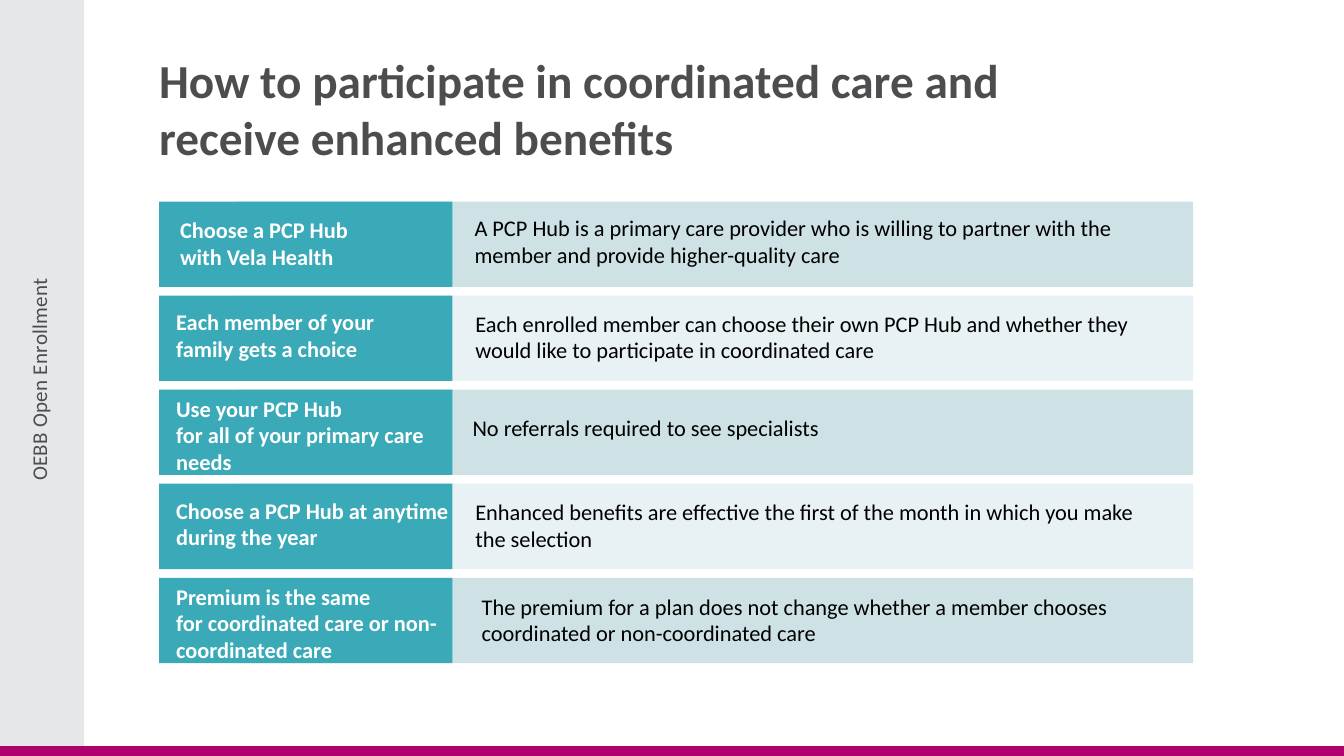
from copy import deepcopy
from dataclasses import dataclass

from pptx import Presentation
from pptx import util as u
from pptx.dml.color import RGBColor
from pptx.enum import shapes, text
from pptx.oxml.ns import qn


@dataclass(frozen=True)
class Theme:
    font: str = "Calibri"
    ink: str = "4C4D4F"
    black: str = "000000"
    white: str = "FFFFFF"
    sidebar: str = "E6E7E8"
    footer: str = "B0006D"
    label: str = "3AA9B8"
    bands: tuple = ("CEE2E6", "E8F1F3")
    title_size: float = 33.8
    side_size: float = 15
    body_size: float = 16


@dataclass(frozen=True)
class Step:
    """One row; each spot is left, offset from the row top, width, height in cm."""
    label: str
    label_spot: tuple
    detail: str
    detail_spot: tuple


THEME = Theme()
ROW_TOP, ROW_PITCH, ROW_HEIGHT = 5.08, 2.37, 2.15
STEPS = (
    Step("Choose a PCP Hub \vwith Vela Health", (4.29, 0.25, 6.81, 1.5),
         "A PCP Hub is a primary care provider who is willing to partner with the "
         "member and provide higher-quality care", (11.71, 0.2, 17.63, 1.5)),
    Step("Each member of your family gets a choice", (4.19, 0.2, 6.91, 1.5),
         "Each enrolled member can choose their own PCP Hub and whether they "
         "would like to participate in coordinated care", (11.73, 0.23, 17.55, 1.5)),
    Step("Use your PCP Hub \vfor all of your primary care needs", (4.19, 0, 6.91, 2.15),
         "No referrals required to see specialists", (11.66, 0.48, 12.85, 0.86)),
    Step("Choose a PCP Hub at anytime during the year", (4.19, 0.2, 7.49, 1.5),
         "Enhanced benefits are effective the first of the month in which you make "
         "the selection", (11.73, 0.25, 17.86, 1.5)),
    Step("Premium is the same \vfor coordinated care or non-coordinated care",
         (4.19, 0, 7.49, 2.15),
         "The premium for a plan does not change whether a member chooses "
         "coordinated or non-coordinated care", (11.89, 0.25, 17.4, 1.5)),
)


def add_block(parent, left, top, width, height, color):
    block = parent.shapes.add_shape(
        shapes.MSO_SHAPE.RECTANGLE, u.Cm(left), u.Cm(top), u.Cm(width), u.Cm(height))
    block.shadow.inherit = False
    block.fill.solid()
    block.fill.fore_color.rgb = RGBColor.from_string(color)
    block.line.fill.background()


def add_text(parent, spot, wording, size, color, bold=False, **frame_format):
    """Add a wrapped one-paragraph text box; a vertical tab breaks the line."""
    box = parent.shapes.add_textbox(*(u.Cm(length) for length in spot))
    frame = box.text_frame
    for name, value in {"word_wrap": True, **frame_format}.items():
        setattr(frame, name, value)
    para = frame.paragraphs[0]
    para.text = wording
    font_format = {"name": THEME.font, "size": u.Pt(size), "bold": bold}
    for span in para.runs:
        for name, value in font_format.items():
            setattr(span.font, name, value)
        span.font.color.rgb = RGBColor.from_string(color)
    for line_break in para._p.findall(qn("a:br")):
        line_break.append(deepcopy(para.runs[0].font._rPr))
    return box


def add_side_label(page, wording, no_margins):
    box = add_text(page, (0.76, 5.08, 0.53, 8.97), wording,
                   THEME.side_size, THEME.ink, **no_margins)
    box.text_frame._txBody.bodyPr.set("vert", "vert270")
    para = box.text_frame.paragraphs[0]
    para.alignment = text.PP_ALIGN.CENTER
    para.line_spacing = u.Pt(15.1)
    para.runs[0].font._rPr.set("spc", "20")


def add_step(page, index, step):
    row = page.shapes.add_group_shape()
    top = ROW_TOP + index * ROW_PITCH
    band = THEME.bands[index % len(THEME.bands)]
    add_block(row, 5.94, top, 24.13, ROW_HEIGHT, band)
    add_block(row, 4.01, top, 7.39, ROW_HEIGHT, THEME.label)
    for wording, spot, color, bold in (
            (step.label, step.label_spot, THEME.white, True),
            (step.detail, step.detail_spot, THEME.black, False)):
        left, offset, width, height = spot
        add_text(row, (left, top + offset, width, height), wording,
                 THEME.body_size, color, bold)


def main():
    deck = Presentation()
    deck.slide_width, deck.slide_height = u.Cm(33.87), u.Cm(19.05)
    page = deck.slides.add_slide(deck.slide_layouts[6])
    no_margins = {f"margin_{side}": 0 for side in ("left", "top", "right", "bottom")}

    add_block(page, 0, 0, 2.12, 18.8, THEME.sidebar)
    add_block(page, 0, 18.8, 33.87, 0.25, THEME.footer)
    add_side_label(page, "OEBB Open Enrollment", no_margins)
    add_text(page, (4.01, 1.9, 26.34, 1.65),
             "How to participate in coordinated care and \vreceive enhanced benefits",
             THEME.title_size, THEME.ink, True,
             vertical_anchor=text.MSO_ANCHOR.MIDDLE, **no_margins)
    for index, step in enumerate(STEPS):
        add_step(page, index, step)
    deck.save("out.pptx")


if __name__ == "__main__":
    main()
